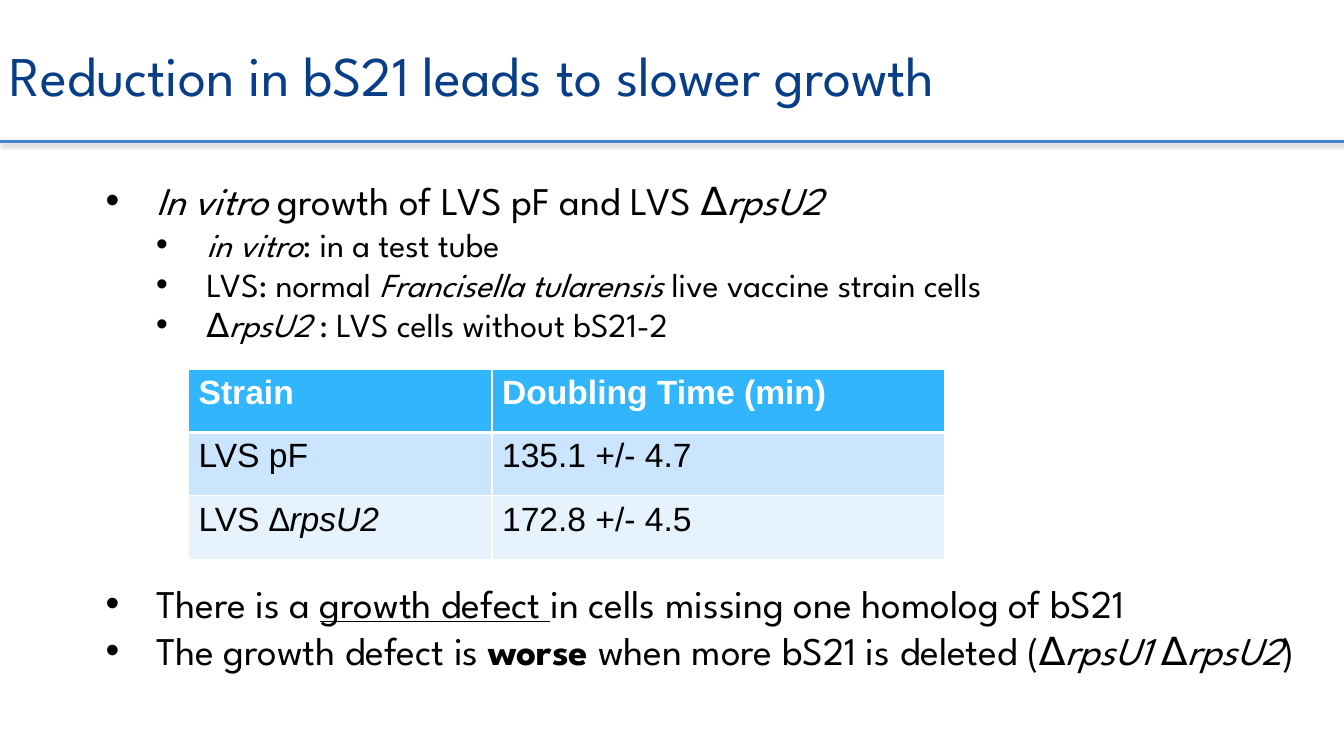
from lxml.etree import SubElement
from pptx import Presentation
from pptx.dml.color import RGBColor
from pptx.enum.text import MSO_ANCHOR
from pptx.oxml import parse_xml
from pptx.oxml.ns import nsdecls, qn
from pptx.util import Emu, Pt

PX = 9144  # 100 px to the inch


def px(length):
    return Emu(length * PX)


def color(value):
    return RGBColor.from_string(value)


class SlideBuilder:
    heading_font = "League Spartan"
    table_font = "Arial"
    title_color = "073E87"
    text_color = "000000"
    rule_color = "4584D3"
    border_color = "FFFFFF"
    row_fills = ("31B6FD", "CCE5FE", "E7F2FF")

    def __init__(self, presentation):
        self.slide = presentation.slides.add_slide(presentation.slide_layouts[6])

    def fill_paragraph(self, paragraph, runs, size, font, text_color):
        """Each run is a pair: text and style letters b, i, u."""
        for text, style in runs:
            run = paragraph.add_run()
            run.text = text
            run.font.name = font
            run.font.size = Pt(size)
            run.font.color.rgb = color(text_color)
            run.font.bold = "b" in style
            run.font.italic = "i" in style
            run.font.underline = "u" in style

    def text_box(self, left, top, width, height):
        frame = self.slide.shapes.add_textbox(*map(px, (left, top, width, height))).text_frame
        frame.word_wrap = True
        return frame

    def title(self, text, *box):
        frame = self.text_box(*box)
        frame.vertical_anchor = MSO_ANCHOR.MIDDLE
        self.fill_paragraph(frame.paragraphs[0], [(text, "")], 40,
                            self.heading_font, self.title_color)

    def rule(self, left, right, y):
        line = self.slide.shapes.add_connector(1, px(left), px(y), px(right), px(y))
        line.line.color.rgb = color(self.rule_color)
        line.line.width = Pt(2)
        line._element.spPr.append(parse_xml(
            f'<a:effectLst {nsdecls("a")}><a:outerShdw blurRad="{Pt(3.1)}" '
            f'dist="{Pt(1.6)}" dir="5400000" rotWithShape="0"><a:srgbClr val="000000">'
            '<a:alpha val="38000"/></a:srgbClr></a:outerShdw></a:effectLst>'))

    def bullets(self, items, *box):
        """Each item is its level, the space before it in points, and its runs."""
        frame = self.text_box(*box)
        for index, (level, space, runs) in enumerate(items):
            paragraph = frame.add_paragraph() if index else frame.paragraphs[0]
            paragraph.level = level
            paragraph.space_before = Pt(space)
            self.fill_paragraph(paragraph, runs, 24 if level else 28,
                                self.heading_font, self.text_color)
            properties = paragraph._p.get_or_add_pPr()
            properties.set("marL", str(px(50 * (level + 1))))
            properties.set("indent", str(px(-50)))
            bullet_color = SubElement(properties, qn("a:buClr"))
            SubElement(bullet_color, qn("a:srgbClr"), val=self.text_color)
            SubElement(properties, qn("a:buFont"), typeface="Arial")
            SubElement(properties, qn("a:buChar"), char="•")

    def cell_borders(self, cell, top, bottom):
        properties = cell._tc.get_or_add_tcPr()
        for index, (side, width) in enumerate(
                (("L", 1), ("R", 1), ("T", top), ("B", bottom))):
            properties.insert(index, parse_xml(
                f'<a:ln{side} {nsdecls("a")} w="{Pt(width)}"><a:solidFill>'
                f'<a:srgbClr val="{self.border_color}"/></a:solidFill></a:ln{side}>'))

    def table(self, rows, left, top, column_widths, row_height):
        table = self.slide.shapes.add_table(
            len(rows), len(column_widths), px(left), px(top),
            px(sum(column_widths)), px(row_height * len(rows))).table
        for column, width in zip(table.columns, column_widths):
            column.width = px(width)
        for row_index, row in enumerate(rows):
            header = row_index == 0
            for column_index, runs in enumerate(row):
                cell = table.cell(row_index, column_index)
                cell.fill.solid()
                cell.fill.fore_color.rgb = color(self.row_fills[row_index])
                self.cell_borders(cell, 3 if row_index == 1 else 1, 3 if header else 1)
                self.fill_paragraph(cell.text_frame.paragraphs[0], runs, 24, self.table_font,
                                    "FFFFFF" if header else self.text_color)


def main():
    presentation = Presentation()
    presentation.slide_width, presentation.slide_height = px(1333), px(750)
    builder = SlideBuilder(presentation)

    # Title and the rule below it
    builder.rule(0, 1333, 140)
    builder.title("Reduction in bS21 leads to slower growth", 0, 13, 1321, 121)

    # Bullets, with room for the table before the conclusions
    builder.bullets([
        (0, 0, [("In vitro ", "i"), ("growth of LVS pF and LVS ", ""), ("∆rpsU2", "i")]),
        (1, 0, [("in vitro", "i"), (": in a test tube", "")]),
        (1, 0, [("LVS: normal ", ""), ("Francisella tularensis ", "i"),
                ("live vaccine strain cells", "")]),
        (1, 0, [("∆", ""), ("rpsU2", "i"), (" : LVS cells without bS21-2", "")]),
        (0, 168, [("There is a ", ""), ("growth defect ", "u"),
                  ("in cells missing one homolog of bS21", "")]),
        (0, 0, [("The growth defect is ", ""), ("worse", "b"),
                (" when more bS21 is deleted (", ""), ("∆rpsU1 ∆rpsU2", "i"), (")", "")]),
    ], 95, 170, 1219, 555)

    # Doubling times
    builder.table([
        [[("Strain", "b")], [("Doubling Time (min)", "b")]],
        [[("LVS pF", "")], [("135.1 +/- 4.7", "")]],
        [[("LVS ", ""), ("∆rpsU2", "i")], [("172.8 +/- 4.5", "")]],
    ], 187, 366, (301, 449), 63)

    presentation.save("out.pptx")


if __name__ == "__main__":
    main()
